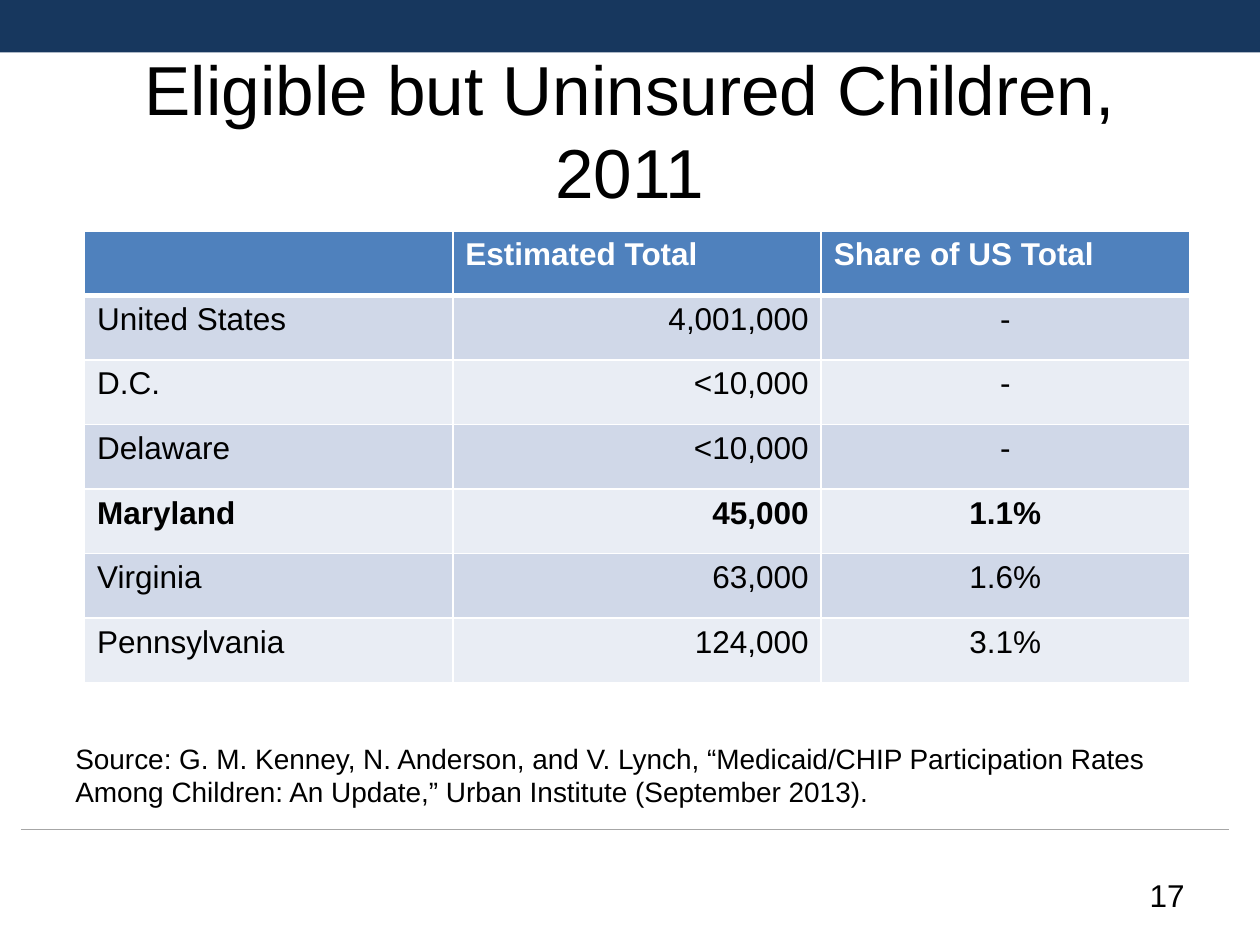
"""Build a slide with a table of eligible but uninsured children."""
from lxml import etree
from pptx import Presentation
from pptx import util as u
from pptx.dml.color import RGBColor
from pptx.enum import shapes, text
from pptx.oxml import ns

TITLE = "Eligible but Uninsured Children, 2011"
ROWS = [
    ("", "Estimated Total", "Share of US Total"),
    ("United States", "4,001,000", "-"),
    ("D.C.", "<10,000", "-"),
    ("Delaware", "<10,000", "-"),
    ("Maryland", "45,000", "1.1%"),
    ("Virginia", "63,000", "1.6%"),
    ("Pennsylvania", "124,000", "3.1%"),
]
STRONG = "Maryland"
SOURCE = (
    "Source: G. M. Kenney, N. Anderson, and V. Lynch, “Medicaid/CHIP "
    "Participation Rates Among Children: An Update,” Urban Institute "
    "(September 2013)."
)
NUMBER = "17"

NAVY = RGBColor(0x17, 0x37, 0x5E)
BLUE = RGBColor(0x4F, 0x81, 0xBD)
BANDS = RGBColor(0xD0, 0xD8, 0xE8), RGBColor(0xE9, 0xED, 0xF4)
GRAY = RGBColor(0xA6, 0xA6, 0xA6)
BLACK = RGBColor(0, 0, 0)
WHITE = RGBColor(255, 255, 255)
ALIGN = text.PP_ALIGN
LEFT, RIGHT, MID = ALIGN.LEFT, ALIGN.RIGHT, ALIGN.CENTER
COLS = LEFT, RIGHT, MID
COL, ROW = 210.5, 36.9


def box(*sides):
    return [u.Pt(side) for side in sides]


def write(frame, words, size=18, color=BLACK, bold=False, align=LEFT):
    frame.word_wrap = True
    para = frame.paragraphs[0]
    para.text = words
    para.alignment = align
    font = para.font
    font.name, font.size, font.bold = "Arial", u.Pt(size), bold
    font.color.rgb = color


def edge(cell, **widths):
    props = cell._tc.get_or_add_tcPr()
    for spot, (side, width) in enumerate(widths.items()):
        line = etree.Element(ns.qn(f"a:ln{side}"), w=str(u.Pt(width)))
        fill = etree.SubElement(line, ns.qn("a:solidFill"))
        etree.SubElement(fill, ns.qn("a:srgbClr"), val=str(WHITE))
        props.insert(spot, line)


def frame_page(slide):
    band = slide.shapes.add_shape(shapes.MSO_SHAPE.RECTANGLE, *box(0, 0, 720, 30))
    band.shadow.inherit = False
    band.fill.solid()
    band.fill.fore_color.rgb = NAVY
    band.line.fill.background()
    rule = slide.shapes.add_connector(
        shapes.MSO_CONNECTOR.STRAIGHT, *box(12, 474, 702, 474))
    rule.line.color.rgb = GRAY
    rule.line.width = u.Pt(0.75)
    etree.SubElement(rule._element.spPr, ns.qn("a:effectLst"))


def fill_table(slide):
    size = len(ROWS), len(COLS)
    table = slide.shapes.add_table(
        *size, *box(48.3, 132, COL * size[1], ROW * size[0])).table
    for col in table.columns:
        col.width = u.Pt(COL)
    for r, row in enumerate(ROWS):
        table.rows[r].height = u.Pt(ROW)
        head = r == 0
        for c, words in enumerate(row):
            cell = table.cell(r, c)
            cell.fill.solid()
            cell.fill.fore_color.rgb = BLUE if head else BANDS[(r - 1) % 2]
            write(cell.text_frame, words, color=WHITE if head else BLACK,
                  bold=head or row[0] == STRONG,
                  align=LEFT if head else COLS[c])
            edge(cell, L=1, R=1, T=3 if r == 1 else 1, B=3 if head else 1)


def main():
    deck = Presentation()
    deck.slide_width, deck.slide_height = box(720, 540)
    slide = deck.slides.add_slide(deck.slide_layouts[5])
    frame_page(slide)
    title = slide.shapes.title
    title.left, title.top, title.width, title.height = box(36, 36, 648, 75.6)
    title.text_frame.auto_size = text.MSO_AUTO_SIZE.NONE
    title.text_frame.vertical_anchor = text.MSO_ANCHOR.MIDDLE
    write(title.text_frame, TITLE, size=39.6, align=MID)
    note = slide.shapes.add_textbox(*box(36, 420, 648, 46)).text_frame
    write(note, SOURCE, size=16)
    note.auto_size = text.MSO_AUTO_SIZE.SHAPE_TO_FIT_TEXT
    fill_table(slide)
    page = slide.shapes.add_textbox(*box(516, 497, 168, 28.8)).text_frame
    page.vertical_anchor = text.MSO_ANCHOR.MIDDLE
    write(page, NUMBER, align=RIGHT)
    deck.save("out.pptx")


if __name__ == "__main__":
    main()
